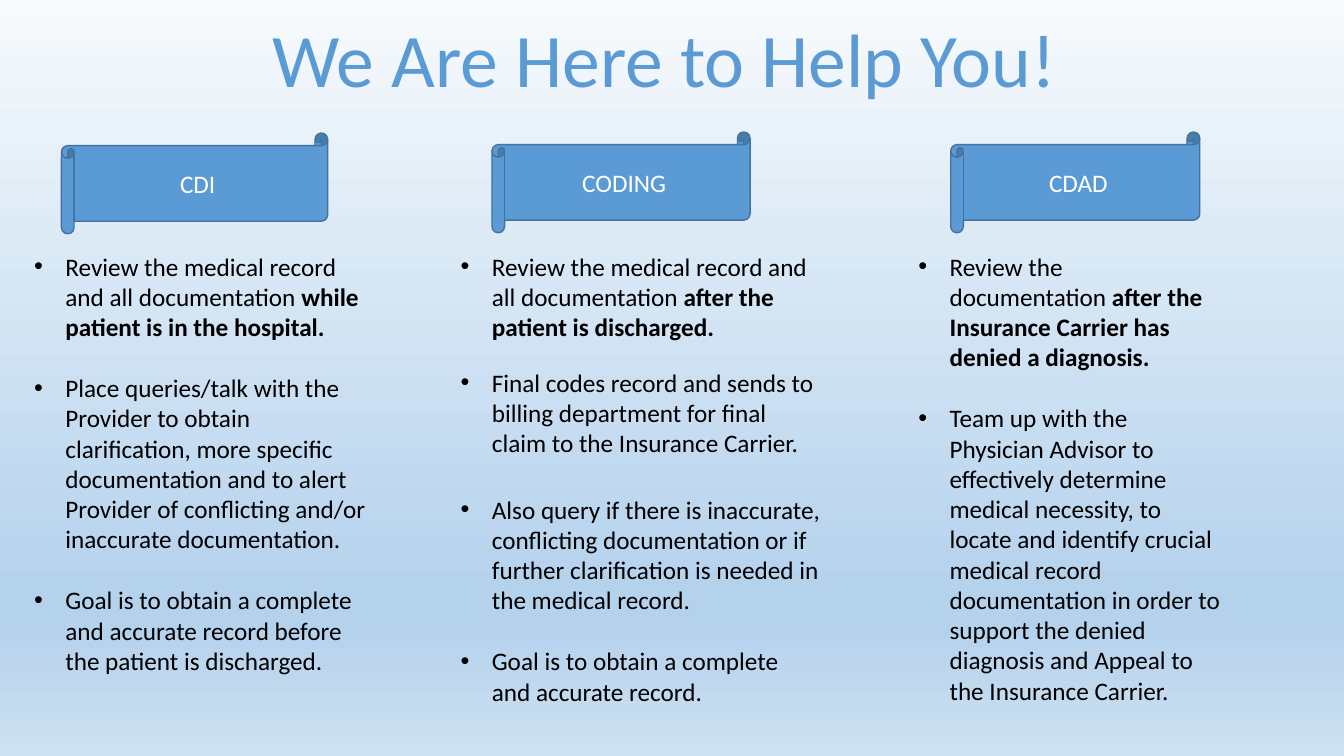
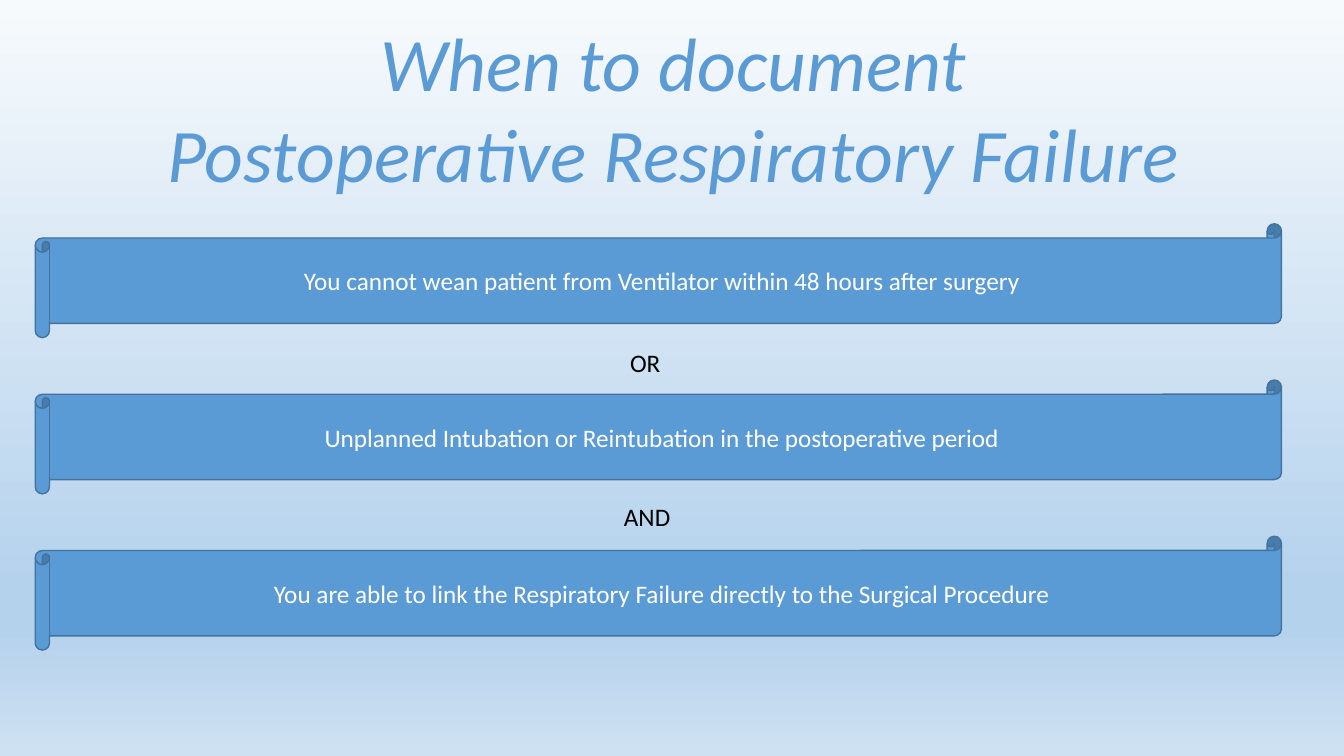
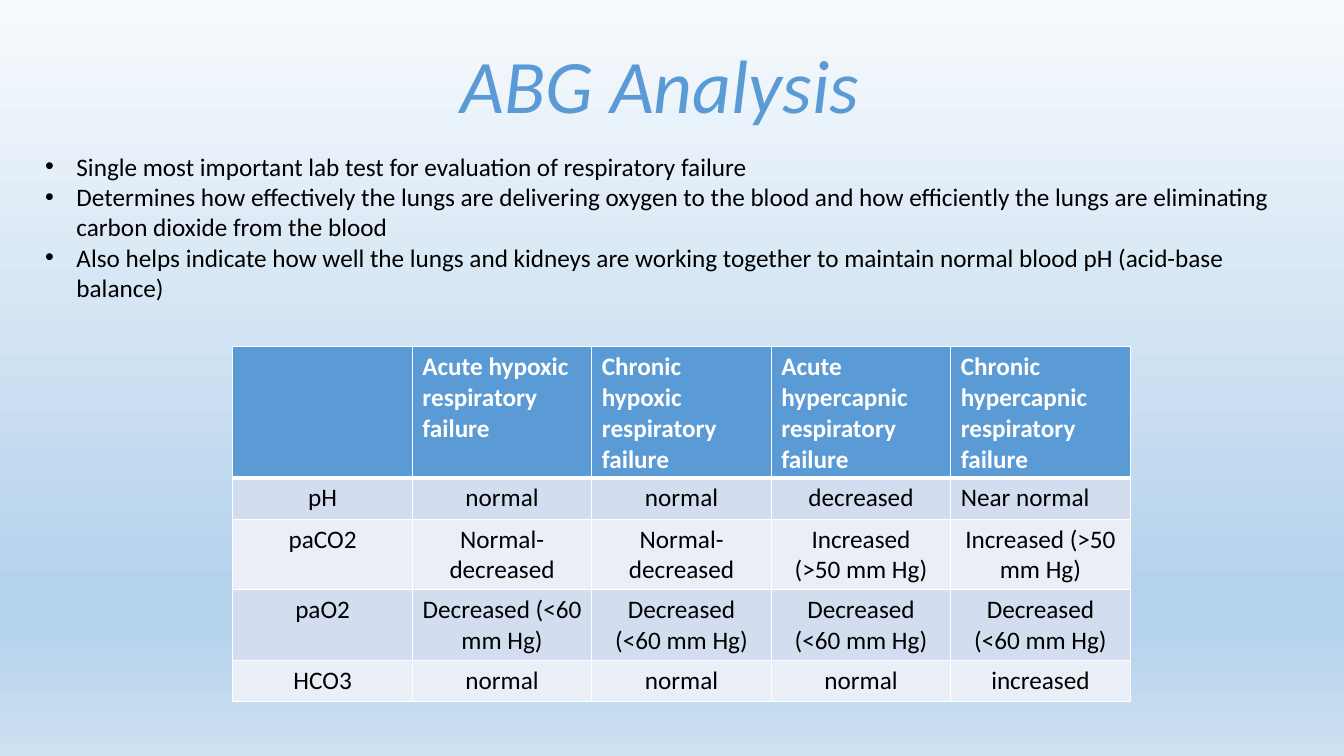
"""Build three slides on documentation roles and respiratory failure."""
import pptx
import pptx.dml.color
import pptx.enum.shapes
import pptx.enum.text
import pptx.oxml.ns
import pptx.util
from lxml import etree

RGBColor = pptx.dml.color.RGBColor
Inches = pptx.util.Inches
Pt = pptx.util.Pt
qn = pptx.oxml.ns.qn
CENTER = pptx.enum.text.PP_ALIGN.CENTER
LEFT = pptx.enum.text.PP_ALIGN.LEFT

BLUE = RGBColor(0x5B, 0x9B, 0xD5)
EDGE = RGBColor(0x43, 0x73, 0x9E)
WHITE = RGBColor(0xFF, 0xFF, 0xFF)
BLACK = RGBColor(0x00, 0x00, 0x00)
BANDS = (RGBColor(0xD2, 0xDE, 0xEF), RGBColor(0xEA, 0xEF, 0xF7))
BACKGROUND = (
    (0, RGBColor(0xF7, 0xFA, 0xFD)),
    (78, RGBColor(0xB5, 0xD2, 0xEC)),
    (83, RGBColor(0xB5, 0xD2, 0xEC)),
    (100, RGBColor(0xCE, 0xE1, 0xF2)),
)
FONT = "Calibri"
BODY_SIZE, TITLE_SIZE = 18, 54
INDENT = 0.31

ROLES = [
    {
        "name": "CDI", "scroll": (0.61, 1.32, 2.64, 1), "text": (0.24, 2.44, 3.55, 4.34),
        "gaps": (22, 22, 0),
        "duties": [
            ("Review the medical record and all documentation ", "while patient is in the hospital."),
            ("Place queries/talk with the Provider to obtain clarification, more specific "
             "documentation and to alert Provider of conflicting and/or inaccurate documentation.",),
            ("Goal is to obtain a complete and accurate record before the patient is discharged.",),
        ],
    },
    {
        "name": "CODING", "scroll": (4.88, 1.31, 2.56, 1), "text": (4.47, 2.44, 3.78, 4.64),
        "gaps": (18, 26, 22, 0),
        "duties": [
            ("Review the medical record and all documentation ", "after the patient is discharged."),
            ("Final codes record and sends to billing department for final claim to the "
             "Insurance Carrier.",),
            ("Also query if there is inaccurate, conflicting documentation or if further "
             "clarification is needed in the medical record.",),
            ("Goal is to obtain a complete and accurate record.",),
        ],
    },
    {
        "name": "CDAD", "scroll": (9.43, 1.31, 2.47, 1), "text": (9.01, 2.44, 3.21, 4.64),
        "gaps": (22, 0),
        "duties": [
            ("Review the documentation ", "after the Insurance Carrier has denied a diagnosis."),
            ("Team up with the Physician Advisor to effectively determine medical necessity, to "
             "locate and identify crucial medical record documentation in order to support the "
             "denied diagnosis and Appeal to the Insurance Carrier.",),
        ],
    },
]

CRITERIA = [
    "You cannot wean patient from Ventilator within 48 hours after surgery",
    "Unplanned Intubation or Reintubation in the postoperative period",
    "You are able to link the Respiratory Failure directly to the Surgical Procedure",
]
CRITERIA_TOP, CRITERIA_STEP = 2.22, 1.55
JOINERS = [("OR", (6.15, 3.4, 0.58, 0.4)), ("AND", (6.09, 4.92, 0.9, 0.4))]

ABG_POINTS = [
    ("Single most important lab test for evaluation of respiratory failure",),
    ("Determines how effectively the lungs are delivering oxygen to the blood and how "
     "efficiently the lungs are eliminating carbon dioxide from the blood",),
    ("Also helps indicate how well the lungs and kidneys are working together to maintain "
     "normal blood pH (acid-base balance)",),
]
ABG_ROWS = [
    ("", "Acute hypoxic respiratory failure", "Chronic hypoxic respiratory failure",
     "Acute hypercapnic respiratory failure", "Chronic hypercapnic respiratory failure"),
    ("pH", "normal", "normal", "decreased", "Near normal"),
    ("paCO2", "Normal-decreased", "Normal-decreased", "Increased\n(>50 mm Hg)",
     "Increased (>50 mm Hg)"),
    ("paO2", "Decreased (<60 mm Hg)", "Decreased\n(<60 mm Hg)", "Decreased\n(<60 mm Hg)",
     "Decreased\n(<60 mm Hg)"),
    ("HCO3", "normal", "normal", "normal", "increased"),
]
LEFT_CELLS = {(1, 4)}
ROW_HEIGHTS = (1.29, 0.41, 0.7, 0.7, 0.41)
COLUMN_WIDTH = 1.78


def add_run(paragraph, text, color=BLACK, size=BODY_SIZE, bold=False, italic=False):
    run = paragraph.add_run()
    run.text = text
    font = run.font
    font.name, font.size, font.bold, font.italic = FONT, Pt(size), bold, italic
    font.color.rgb = color


def paragraphs_for(frame, items):
    for index, item in enumerate(items):
        yield (frame.paragraphs[0] if index == 0 else frame.add_paragraph()), item


def add_text_frame(slide, box, wrap=True):
    frame = slide.shapes.add_textbox(*map(Inches, box)).text_frame
    frame.word_wrap = wrap
    return frame


def add_title(slide, box, lines, italic=True):
    for paragraph, line in paragraphs_for(add_text_frame(slide, box, wrap=False), lines):
        paragraph.alignment = CENTER
        add_run(paragraph, line, BLUE, TITLE_SIZE, italic=italic)


def add_scroll(slide, box, label):
    kind = pptx.enum.shapes.MSO_SHAPE.HORIZONTAL_SCROLL
    scroll = slide.shapes.add_shape(kind, *map(Inches, box))
    scroll.shadow.inherit = False
    scroll.fill.solid()
    scroll.fill.fore_color.rgb = BLUE
    scroll.line.color.rgb = EDGE
    scroll.line.width = Pt(1)
    frame = scroll.text_frame
    frame.word_wrap = True
    frame.vertical_anchor = pptx.enum.text.MSO_ANCHOR.MIDDLE
    frame.paragraphs[0].alignment = CENTER
    add_run(frame.paragraphs[0], label, WHITE)


def add_bullets(slide, box, points, gaps):
    frame = add_text_frame(slide, box)
    for paragraph, (runs, gap) in paragraphs_for(frame, zip(points, gaps)):
        paragraph.space_after = Pt(gap)
        properties = paragraph._p.get_or_add_pPr()
        properties.set("marL", str(Inches(INDENT)))
        properties.set("indent", str(-Inches(INDENT)))
        etree.SubElement(properties, qn("a:buFont")).set("typeface", "Arial")
        etree.SubElement(properties, qn("a:buChar")).set("char", "•")
        for position, text in enumerate(runs):
            add_run(paragraph, text, bold=position > 0)


def set_borders(cell, bottom_width):
    properties = cell._tc.get_or_add_tcPr()
    sides = (("a:lnL", 1), ("a:lnR", 1), ("a:lnT", 1), ("a:lnB", bottom_width))
    for position, (tag, width) in enumerate(sides):
        line = etree.Element(qn(tag), w=str(Pt(width)))
        fill = etree.SubElement(line, qn("a:solidFill"))
        etree.SubElement(fill, qn("a:srgbClr")).set("val", str(WHITE))
        properties.insert(position, line)


def add_abg_table(slide):
    columns = len(ABG_ROWS[0])
    box = (2.31, 3.44, COLUMN_WIDTH * columns, sum(ROW_HEIGHTS))
    table = slide.shapes.add_table(len(ABG_ROWS), columns, *map(Inches, box)).table
    table.first_row = table.horz_banding = False
    for column in table.columns:
        column.width = Inches(COLUMN_WIDTH)
    for row_index, values in enumerate(ABG_ROWS):
        header = row_index == 0
        table.rows[row_index].height = Inches(ROW_HEIGHTS[row_index])
        for column_index, value in enumerate(values):
            cell = table.cell(row_index, column_index)
            cell.fill.solid()
            cell.fill.fore_color.rgb = BLUE if header else BANDS[(row_index - 1) % 2]
            set_borders(cell, 3 if header or row_index == 0 else 1)
            if row_index == 1:
                cell._tc.tcPr.find(qn("a:lnT")).set("w", str(Pt(3)))
            at_left = header or (row_index, column_index) in LEFT_CELLS
            for paragraph, line in paragraphs_for(cell.text_frame, value.split("\n")):
                paragraph.alignment = LEFT if at_left else CENTER
                if line:
                    add_run(paragraph, line, WHITE if header else BLACK, bold=header)


def set_background(master):
    fill = master.background.fill
    fill.gradient()
    fill.gradient_angle = 270
    stops = master.element.cSld.find(".//" + qn("a:gsLst"))
    for stop in list(stops):
        stops.remove(stop)
    for position, color in BACKGROUND:
        stop = etree.SubElement(stops, qn("a:gs"), pos=str(position * 1000))
        etree.SubElement(stop, qn("a:srgbClr")).set("val", str(color))


def build_roles(slide):
    add_title(slide, (2.56, 0.07, 8.06, 1.01), ["We Are Here to Help You!"], italic=False)
    for role in ROLES:
        add_scroll(slide, role["scroll"], role["name"])
        add_bullets(slide, role["text"], role["duties"], role["gaps"])


def build_criteria(slide):
    add_title(slide, (1.5, 0.11, 10.35, 1.92),
              ["When to document", "Postoperative Respiratory Failure"])
    for index, criterion in enumerate(CRITERIA):
        add_scroll(slide, (0.35, CRITERIA_TOP + index * CRITERIA_STEP, 12.36, 1.13), criterion)
    for word, box in JOINERS:
        add_run(add_text_frame(slide, box).paragraphs[0], word)


def build_abg(slide):
    add_title(slide, (4.09, 0.33, 4.91, 1.01), ["ABG Analysis"])
    add_bullets(slide, (0.35, 1.45, 12.61, 1.62), ABG_POINTS, [0] * len(ABG_POINTS))
    add_abg_table(slide)


def main():
    presentation = pptx.Presentation()
    presentation.slide_width, presentation.slide_height = Inches(13.33), Inches(7.5)
    set_background(presentation.slide_master)
    for build in (build_roles, build_criteria, build_abg):
        build(presentation.slides.add_slide(presentation.slide_layouts[6]))
    presentation.save("out.pptx")


if __name__ == "__main__":
    main()
